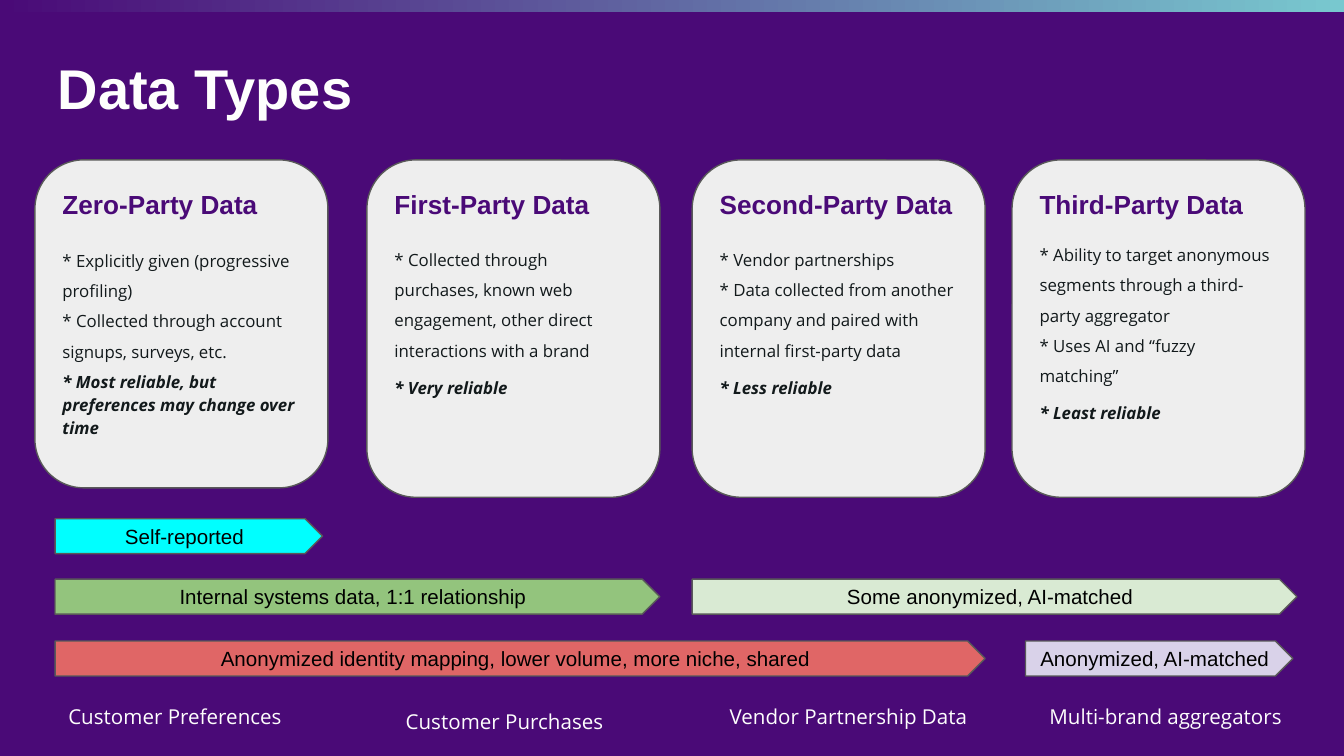
"""Build the Data Types slide comparing zero- to third-party data."""
from pptx import Presentation
from pptx.dml.color import RGBColor
from pptx.enum.shapes import MSO_SHAPE
from pptx.enum.text import MSO_ANCHOR, MSO_AUTO_SIZE, PP_ALIGN
from pptx.util import Inches, Pt

RECTANGLE = MSO_SHAPE.RECTANGLE
ROUNDED = MSO_SHAPE.ROUNDED_RECTANGLE
PENTAGON = MSO_SHAPE.PENTAGON
TOP, MIDDLE = MSO_ANCHOR.TOP, MSO_ANCHOR.MIDDLE
LEFT, CENTER = PP_ALIGN.LEFT, PP_ALIGN.CENTER
GROW = MSO_AUTO_SIZE.SHAPE_TO_FIT_TEXT

PURPLE, TEAL, WHITE, INK = "4A0A77", "78C8CF", "FEFEFD", "12191B"
CARD_GREY, OUTLINE = "EEEEEE", "595959"


def rgb(value):
    """Turn a hex string into a colour."""
    return RGBColor.from_string(value)


def write(frame, text, size=9, font="Open Sans", color=INK, bold=False, italic=False,
          align=LEFT, anchor=TOP, spacing=1.0, before=0, after=0):
    """Add a formatted paragraph to a text frame."""
    frame.word_wrap = True
    frame.vertical_anchor = anchor
    frame.margin_left = frame.margin_right = Inches(0.1)
    frame.margin_top = frame.margin_bottom = Inches(0.1)
    paragraph = frame.add_paragraph() if frame.text else frame.paragraphs[0]
    paragraph.alignment = align
    paragraph.line_spacing = spacing
    paragraph.space_before, paragraph.space_after = Pt(before), Pt(after)
    run = paragraph.add_run()
    run.text = text
    run.font.size, run.font.name = Pt(size), font
    run.font.bold, run.font.italic = bold, italic
    run.font.color.rgb = rgb(color)


prs = Presentation()
prs.slide_width = Inches(10)
prs.slide_height = Inches(10) * 9 // 16
slide = prs.slides.add_slide(prs.slide_layouts[5])
slide.background.fill.solid()
slide.background.fill.fore_color.rgb = rgb(PURPLE)

band = slide.shapes.add_shape(RECTANGLE, 0, 0, Inches(10), Inches(0.09))
band.shadow.inherit = False
band.line.fill.background()
band.fill.gradient()
band.fill.gradient_angle = 0
for stop, color in zip(band.fill.gradient_stops, (PURPLE, TEAL)):
    stop.color.rgb = rgb(color)

title = slide.shapes.title
title.left, title.top = Inches(0.33), Inches(0.18)
title.width, title.height = Inches(7.8), Inches(0.94)
write(title.text_frame, "Data Types", size=30, font="Arial", color=WHITE, bold=True, anchor=MIDDLE)

cards = [
    (0.26, 2.44, "Zero-Party Data", 11, 1.15,
     ["* Explicitly given (progressive profiling)",
      "* Collected through account signups, surveys, etc."],
     "* Most reliable, but preferences may change over time"),
    (2.73, 2.51, "First-Party Data", 10.4, 1.5,
     ["* Collected through purchases, known web engagement, other direct interactions with a brand"],
     "* Very reliable"),
    (5.15, 2.51, "Second-Party Data", 10.4, 1.5,
     ["* Vendor partnerships",
      "* Data collected from another company and paired with internal first-party data"],
     "* Less reliable"),
    (7.53, 2.51, "Third-Party Data", 7.8, 1.5,
     ["* Ability to target anonymous segments through a third-party aggregator",
      "* Uses AI and “fuzzy matching”"],
     "* Least reliable"),
]
for left, height, heading, gap, verdict_spacing, points, verdict in cards:
    card = slide.shapes.add_shape(ROUNDED, Inches(left), Inches(1.19), Inches(2.18), Inches(height))
    card.shadow.inherit = False
    card.fill.solid()
    card.fill.fore_color.rgb = rgb(CARD_GREY)
    card.line.color.rgb = rgb(OUTLINE)
    card.line.width = Pt(0.75)
    write(card.text_frame, heading, size=14, font="Arial", color=PURPLE, bold=True, spacing=1.03)
    for index, point in enumerate(points):
        write(card.text_frame, point, spacing=1.5, before=0 if index else gap)
    write(card.text_frame, verdict, bold=True, italic=True, spacing=verdict_spacing, before=3.6)

arrows = [
    (0.41, 3.86, 1.99, "00FFFF", "Self-reported"),
    (0.41, 4.31, 4.5, "93C47D", "Internal systems data, 1:1 relationship"),
    (0.41, 4.77, 6.92, "E06666", "Anonymized identity mapping, lower volume, more niche, shared"),
    (5.15, 4.31, 4.5, "D9EAD3", "Some anonymized, AI-matched"),
    (7.63, 4.77, 1.99, "D9D2E9", "Anonymized, AI-matched"),
]
for left, top, width, color, reach in arrows:
    arrow = slide.shapes.add_shape(PENTAGON, Inches(left), Inches(top), Inches(width), Inches(0.26))
    arrow.shadow.inherit = False
    arrow.fill.solid()
    arrow.fill.fore_color.rgb = rgb(color)
    arrow.line.color.rgb = rgb(OUTLINE)
    arrow.line.width = Pt(0.75)
    write(arrow.text_frame, reach, size=11, font="Arial", color="000000", align=CENTER, anchor=MIDDLE)

examples = [
    (0.41, 5.11, 1.81, "Customer Preferences"),
    (2.92, 5.15, 1.81, "Customer Purchases"),
    (5.33, 5.11, 1.99, "Vendor Partnership Data"),
    (7.71, 5.11, 1.93, "Multi-brand aggregators"),
]
for left, top, width, example in examples:
    label = slide.shapes.add_textbox(Inches(left), Inches(top), Inches(width), Inches(0.39))
    label.text_frame.auto_size = GROW
    write(label.text_frame, example, size=11, color=WHITE, spacing=1.15, after=12)

prs.save("out.pptx")
